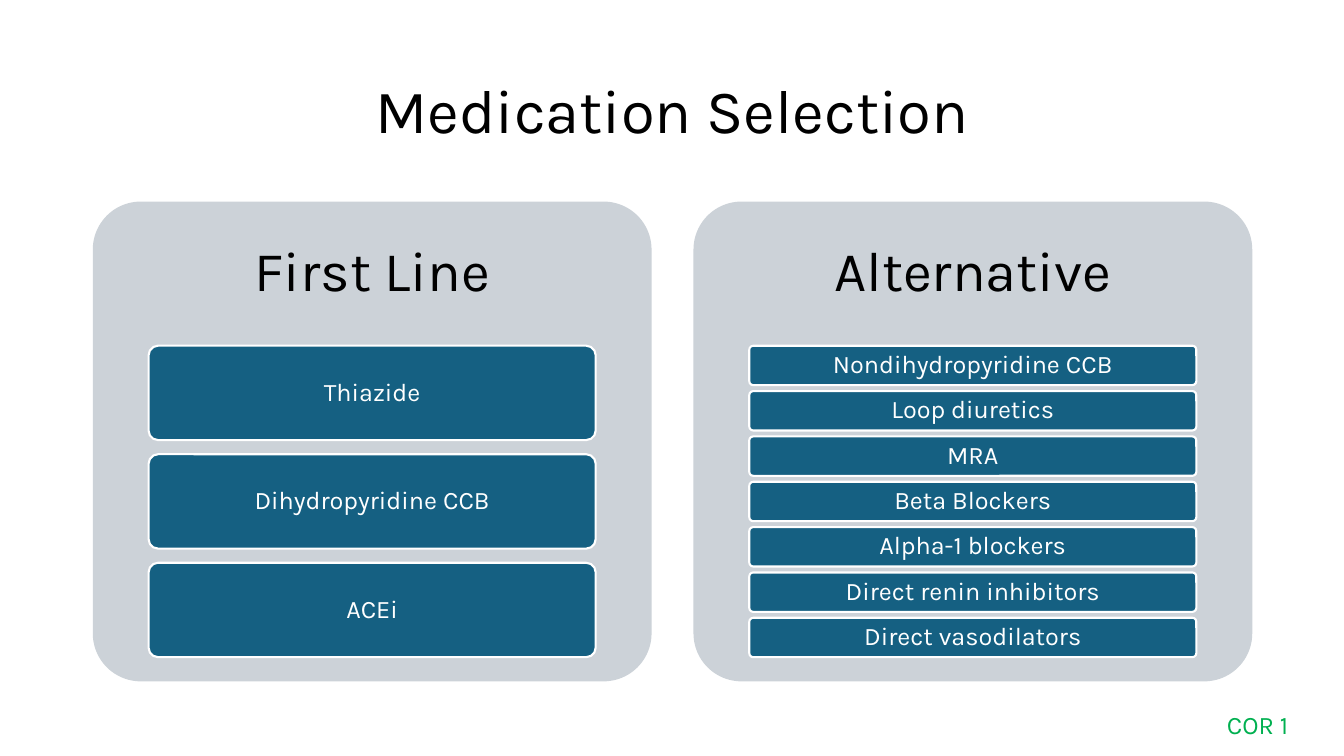
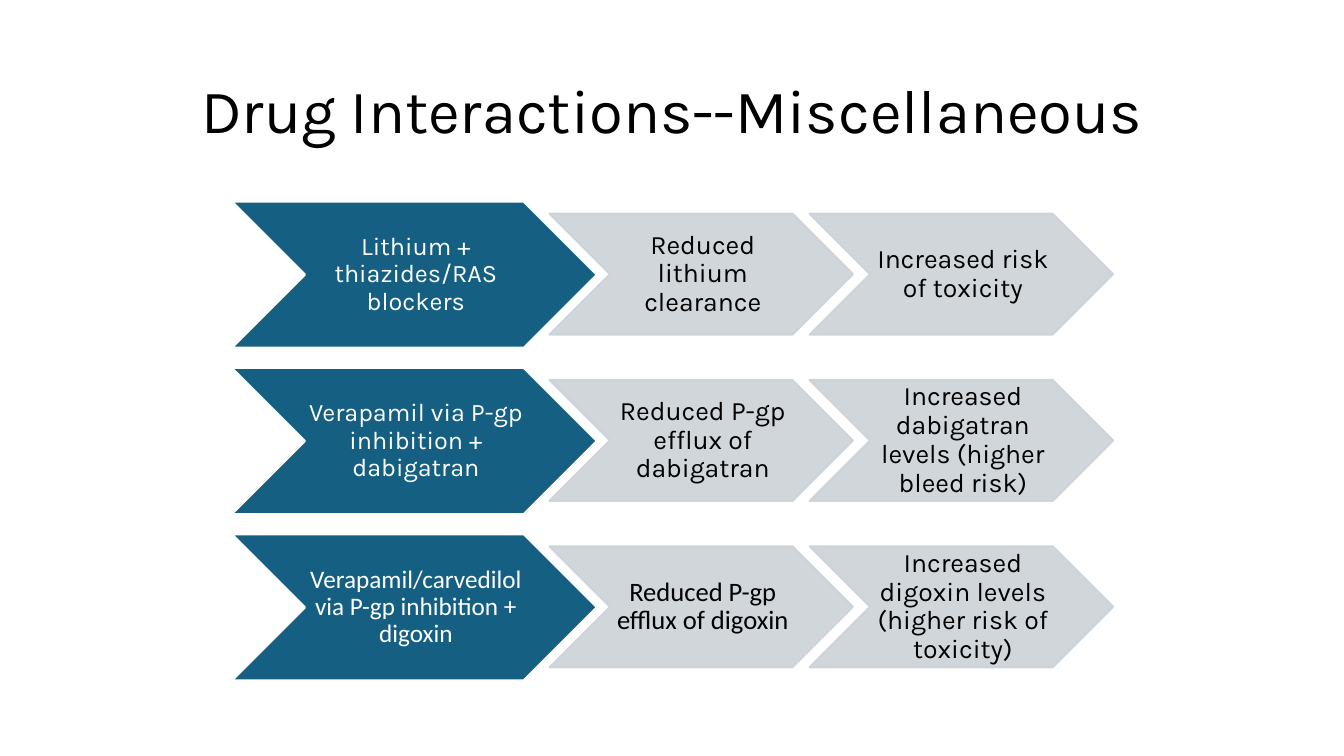
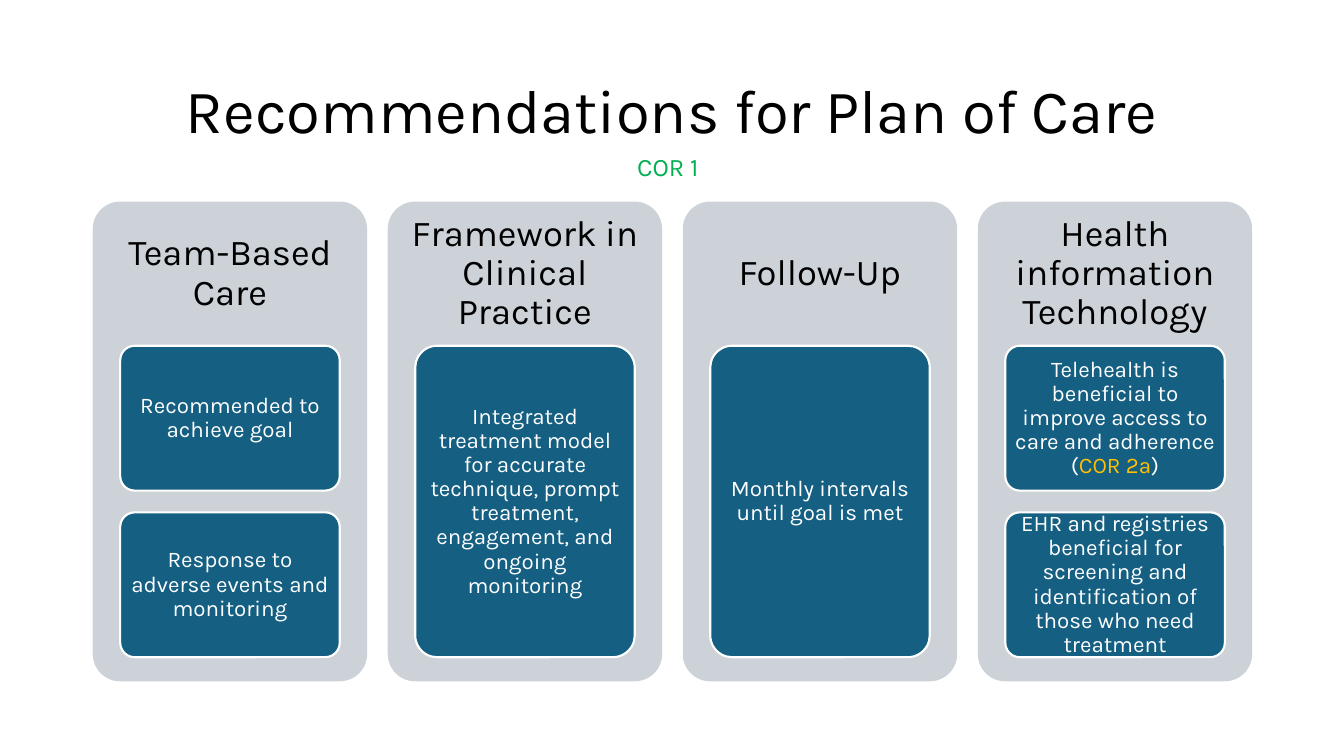
from pptx import Presentation
from pptx.dml.color import RGBColor
from pptx.enum.shapes import MSO_SHAPE
from pptx.enum.text import MSO_ANCHOR, PP_ALIGN
from pptx.oxml.ns import qn
from pptx.util import Inches, Pt
from lxml import etree

ROUNDED, CHEVRON = MSO_SHAPE.ROUNDED_RECTANGLE, MSO_SHAPE.CHEVRON
TOP, MIDDLE = MSO_ANCHOR.TOP, MSO_ANCHOR.MIDDLE
LEFT, CENTER = PP_ALIGN.LEFT, PP_ALIGN.CENTER

BLUE, GRAY, GREEN, GOLD = "156082", "CCD2D8", "00B050", "FFC000"
BLACK, WHITE = "000000", "FFFFFF"


def rgb(value):
    return RGBColor.from_string(value)


def apply(target, values):
    for name, value in values.items():
        setattr(target, name, value)


class Deck:
    font = "Karla"
    margin, content_width = 0.92, 11.5
    panel_top, panel_height, heading_height = 2, 4.76, 1.43
    items_top, items_height = 3.43, 3.09
    panel_gap, item_gap = 0.075, 0.15  # share of a panel's width, an item's height

    def __init__(self):
        self.deck = Presentation()
        apply(self.deck, {"slide_width": Inches(13.33), "slide_height": Inches(7.5)})
        self.slide = None

    def new_slide(self, title):
        self.slide = self.deck.slides.add_slide(self.deck.slide_layouts[6])
        self.text(title, (self.margin, 0.4, self.content_width, 1.45), 44)

    def fill_text(self, frame, content, size, color, insets=(0.1, 0.05, 0.1, 0.05),
                  anchor=MIDDLE, align=CENTER, spacing=0.9, font=None):
        """Content is a string or a list of (text, color) runs."""
        sides = ("margin_left", "margin_top", "margin_right", "margin_bottom")
        apply(frame, {"word_wrap": True, "vertical_anchor": anchor,
                      **dict(zip(sides, map(Inches, insets)))})
        paragraph = frame.paragraphs[0]
        apply(paragraph, {"alignment": align, "line_spacing": spacing})
        for words, run_color in [(content, color)] if isinstance(content, str) else content:
            run = paragraph.add_run()
            run.text = words
            apply(run.font, {"size": Pt(size), "name": font or self.font})
            run.font.color.rgb = rgb(run_color)

    def text(self, content, box, size, color=BLACK, **style):
        frame = self.slide.shapes.add_textbox(*map(Inches, box)).text_frame
        self.fill_text(frame, content, size, color, **style)

    def shape(self, kind, box, fill, line=None, opacity=100):
        shape = self.slide.shapes.add_shape(kind, *map(Inches, box))
        shape.shadow.inherit = False
        shape.fill.solid()
        shape.fill.fore_color.rgb = rgb(fill)
        if line:
            shape.line.color.rgb = rgb(line)
            shape.line.width = Pt(1.5)
        else:
            shape.line.fill.background()
        if kind == ROUNDED:
            shape.adjustments[0] = 0.1
        if opacity < 100:
            for color in shape.element.spPr.iter(qn("a:srgbClr")):
                etree.SubElement(color, qn("a:alpha")).set("val", str(opacity * 1000))
        return shape

    def badge(self, box):
        self.text("COR 1", box, 18, GREEN, anchor=TOP, align=LEFT, spacing=1)

    def panels(self, groups, heading_size, heading_inset, item_size, item_insets):
        count = len(groups)
        width = self.content_width / (count + (count - 1) * self.panel_gap)
        for column, (heading, items) in enumerate(groups):
            left = self.margin + column * width * (1 + self.panel_gap)
            self.shape(ROUNDED, (left, self.panel_top, width, self.panel_height), GRAY)
            self.text(heading, (left, self.panel_top, width, self.heading_height),
                      heading_size, insets=(heading_inset,) * 4)
            rows = len(items)
            height = self.items_height / (rows + (rows - 1) * self.item_gap)
            for row, item in enumerate(items):
                top = self.items_top + row * height * (1 + self.item_gap)
                box = (left + 0.1 * width, top, 0.8 * width, height)
                card = self.shape(ROUNDED, box, BLUE, WHITE)
                self.fill_text(card.text_frame, item, item_size, WHITE, insets=item_insets)

    def chevron(self, content, box, fill, line, size, color, font, opacity=100):
        arrow = self.shape(CHEVRON, box, fill, line, opacity)
        self.fill_text(arrow.text_frame, content, size, color,
                       insets=(0.03, 0.01, 0, 0.01), font=font)

    def chain(self, top, cause, effects, fonts):
        self.chevron(cause, (2.3, top, 3.62, 1.45), BLUE, WHITE, 18, WHITE, fonts[0])
        for step, effect in enumerate(effects):
            box = (5.45 + 2.58 * step, top + 0.12, 3.01, 1.2)
            self.chevron(effect, box, GRAY, GRAY, 19, BLACK, fonts[step + 1], opacity=90)


def main():
    deck = Deck()

    # Medication selection
    deck.new_slide("Medication Selection")
    deck.panels([
        ("First Line", ["Thiazide", "Dihydropyridine CCB", "ACEi"]),
        ("Alternative", ["Nondihydropyridine CCB", "Loop diuretics", "MRA",
                         "Beta Blockers", "Alpha-1 blockers",
                         "Direct renin inhibitors", "Direct vasodilators"]),
    ], 40, 0.17, 18, (0.05, 0.04, 0.05, 0.04))
    deck.badge((12.07, 6.99, 1.09, 0.71))

    # Drug interactions
    deck.new_slide("Drug Interactions--Miscellaneous")
    karla = ("Karla",) * 3
    interactions = [
        ("Lithium + thiazides/RAS blockers",
         ["Reduced lithium clearance", "Increased risk of toxicity"], karla),
        ("Verapamil via P-gp inhibition + dabigatran",
         ["Reduced P-gp efflux of dabigatran",
          "Increased dabigatran levels (higher bleed risk)"], karla),
        ("Verapamil/carvedilol via P-gp inhibition + digoxin",
         ["Reduced P-gp efflux of digoxin",
          "Increased digoxin levels (higher risk of toxicity)"],
         ("Calibri", "Calibri", "Karla")),
    ]
    for row, (cause, effects, fonts) in enumerate(interactions):
        deck.chain(2 + 1.65 * row, cause, effects, fonts)

    # Plan of care
    deck.new_slide("Recommendations for Plan of Care")
    telehealth = [
        ("Telehealth is beneficial to improve access to care and adherence (", WHITE),
        ("COR 2a", GOLD), (")", WHITE)]
    deck.panels([
        ("Team-Based Care", ["Recommended to achieve goal",
                             "Response to adverse events and monitoring"]),
        ("Framework in Clinical Practice",
         ["Integrated treatment model for accurate technique, prompt treatment, "
          "engagement, and ongoing monitoring"]),
        ("Follow-Up", ["Monthly intervals until goal is met"]),
        ("Health information Technology",
         [telehealth, "EHR and registries beneficial for screening and "
                      "identification of those who need treatment"]),
    ], 26, 0.11, 16, (0.04, 0.03, 0.04, 0.03))
    deck.badge((6.22, 1.45, 0.89, 0.4))

    deck.deck.save("out.pptx")


if __name__ == "__main__":
    main()
